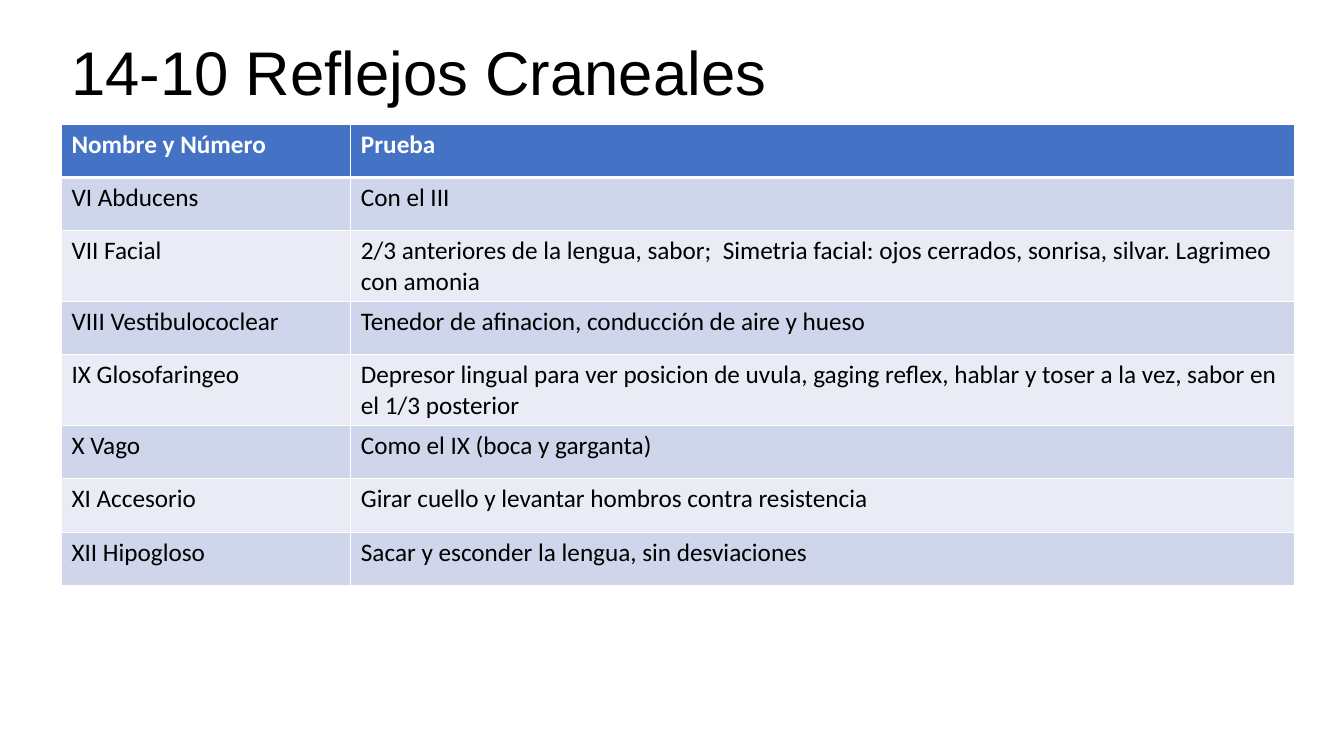
from dataclasses import dataclass

from lxml.etree import SubElement
from pptx import Presentation
from pptx.dml.color import RGBColor
from pptx.enum.text import MSO_ANCHOR
from pptx.oxml.ns import qn
from pptx.slide import Slide
from pptx.table import _Cell
from pptx.util import Inches, Pt

WHITE = RGBColor(0xFF, 0xFF, 0xFF)
BLACK = RGBColor(0x00, 0x00, 0x00)
HEADER_BLUE = RGBColor(0x44, 0x72, 0xC4)
BANDS = (RGBColor(0xCF, 0xD5, 0xEA), RGBColor(0xE9, 0xEB, 0xF5))
COLUMN_WIDTHS = (2.87, 9.36)
ROW_HEIGHT = 0.53


@dataclass(frozen=True)
class Nerve:
    name: str
    test: str


HEADER = Nerve("Nombre y Número", "Prueba")
NERVES = [
    Nerve("VI Abducens", "Con el III"),
    Nerve("VII Facial", "2/3 anteriores de la lengua, sabor;  Simetria facial: "
          "ojos cerrados, sonrisa, silvar. Lagrimeo con amonia"),
    Nerve("VIII Vestibulococlear", "Tenedor de afinacion, conducción de aire y hueso"),
    Nerve("IX Glosofaringeo", "Depresor lingual para ver posicion de uvula, "
          "gaging reflex, hablar y toser a la vez, sabor en el 1/3 posterior"),
    Nerve("X Vago", "Como el IX (boca y garganta)"),
    Nerve("XI Accesorio", "Girar cuello y levantar hombros contra resistencia"),
    Nerve("XII Hipogloso", "Sacar y esconder la lengua, sin desviaciones"),
]


def set_borders(cell: _Cell, top: float, bottom: float) -> None:
    tc_pr = cell._tc.get_or_add_tcPr()
    widths = {"lnL": 1, "lnR": 1, "lnT": top, "lnB": bottom}
    for i, (tag, width) in enumerate(widths.items()):
        ln = SubElement(tc_pr, qn(f"a:{tag}"), w=str(Pt(width)))
        fill = SubElement(ln, qn("a:solidFill"))
        SubElement(fill, qn("a:srgbClr"), val=str(WHITE))
        tc_pr.insert(i, ln)


def fill_cell(cell: _Cell, text: str, row: int) -> None:
    is_header = row == 0
    cell.text = text
    font = cell.text_frame.paragraphs[0].font
    font.name = "Calibri"
    font.size = Pt(18)
    font.bold = is_header
    font.color.rgb = WHITE if is_header else BLACK
    cell.fill.solid()
    cell.fill.fore_color.rgb = HEADER_BLUE if is_header else BANDS[(row - 1) % 2]
    set_borders(cell, top=3 if row == 1 else 1, bottom=3 if is_header else 1)


def add_title(s: Slide, text: str) -> None:
    sp = s.shapes.add_textbox(Inches(0.61), Inches(0.02), Inches(11.5), Inches(1.45))
    tf = sp.text_frame
    tf.word_wrap = True
    tf.vertical_anchor = MSO_ANCHOR.MIDDLE
    p = tf.paragraphs[0]
    p.text = text
    p.line_spacing = 0.9
    p.font.name = "Arial"
    p.font.size = Pt(44)
    p.font.color.rgb = BLACK


def add_nerve_table(s: Slide, entries: list[Nerve]) -> None:
    table = s.shapes.add_table(
        len(entries), len(COLUMN_WIDTHS), Inches(0.61), Inches(1.23),
        Inches(sum(COLUMN_WIDTHS)), Inches(ROW_HEIGHT * len(entries))).table
    for column, width in zip(table.columns, COLUMN_WIDTHS):
        column.width = Inches(width)
    for row, nerve in enumerate(entries):
        for col, text in enumerate((nerve.name, nerve.test)):
            fill_cell(table.cell(row, col), text, row)


def main() -> None:
    prs = Presentation()
    prs.slide_width = Inches(13.33)
    prs.slide_height = Inches(7.5)
    s = prs.slides.add_slide(prs.slide_layouts[6])
    add_title(s, "14-10 Reflejos Craneales")
    add_nerve_table(s, [HEADER, *NERVES])
    prs.save("out.pptx")


if __name__ == "__main__":
    main()
